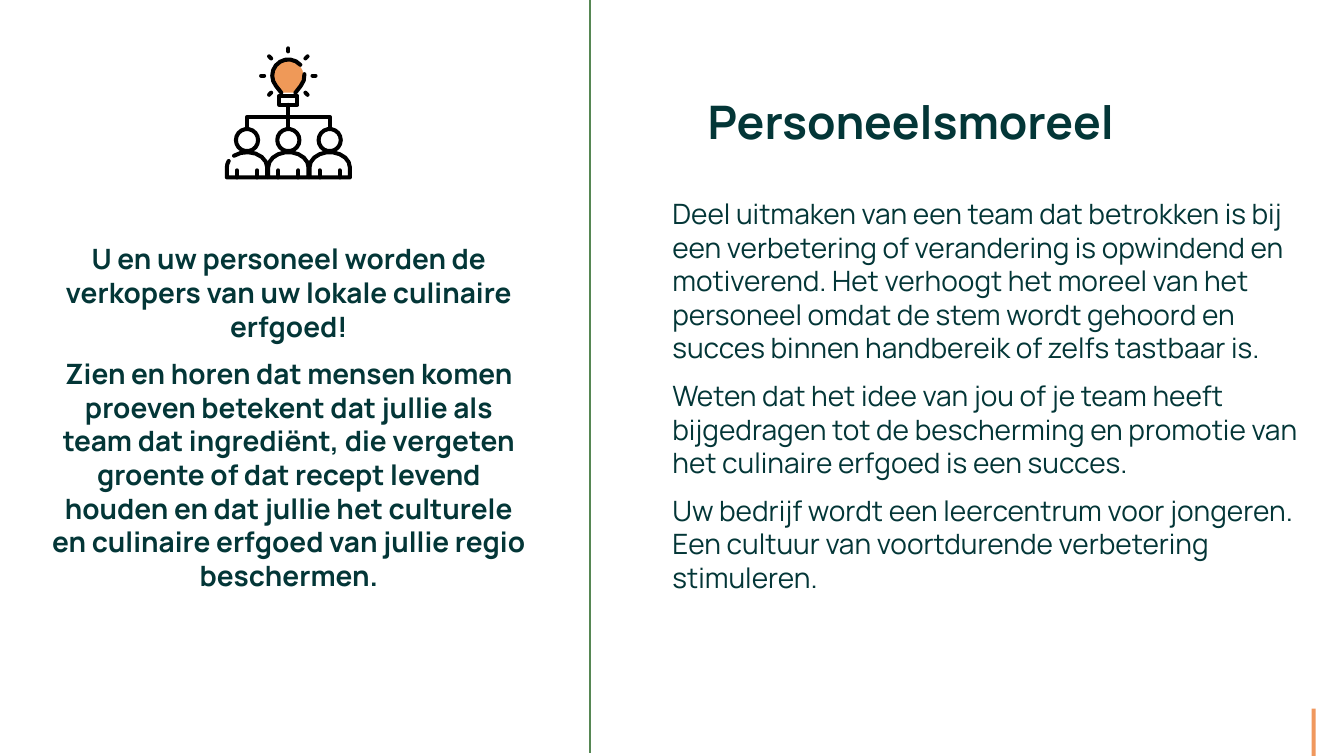
"""Build the staff morale slide."""
from dataclasses import dataclass
from math import cos, radians, sin
from typing import Optional

from lxml import etree
from pptx import Presentation
from pptx.dml.color import RGBColor
from pptx.enum.shapes import MSO_CONNECTOR, MSO_SHAPE
from pptx.enum.text import PP_ALIGN
from pptx.oxml.ns import qn
from pptx.util import Inches, Pt

LEFT, CENTER = PP_ALIGN.LEFT, PP_ALIGN.CENTER
RECT = MSO_SHAPE.RECTANGLE
STRAIGHT = MSO_CONNECTOR.STRAIGHT

Point = tuple[float, float]
Box = tuple[float, float, float, float]
Stroke = list[Point]


@dataclass(frozen=True)
class Theme:
    """Colours, font and sizes of the slide."""
    ink: RGBColor = RGBColor(0x03, 0x36, 0x37)
    rule: RGBColor = RGBColor(0x56, 0x87, 0x54)
    bar: RGBColor = RGBColor(0xF0, 0x98, 0x5E)
    bulb: RGBColor = RGBColor(0xEF, 0x99, 0x58)
    black: RGBColor = RGBColor(0, 0, 0)
    font: str = "Manrope"
    title: float = 33
    body: float = 20
    gap: float = 10
    stroke: float = 2.9


@dataclass(frozen=True)
class Block:
    """A text box with its paragraphs."""
    box: Box
    texts: tuple[str, ...]
    size: float
    bold: bool
    align: PP_ALIGN
    lead: float


@dataclass(frozen=True)
class Person:
    """A figure below the bulb, with the angle where its shoulders start."""
    mid: float
    start: float = 180


THEME = Theme()
BULB: Point = (2.86, 0.75)
HEAD_Y, HEAD_R = 1.39, 0.11
PEOPLE = (Person(2.45, 230), Person(2.86), Person(3.27))
BLOCKS = (
    Block((6.57, 1.9, 6.62, 4.07), (
        "Deel uitmaken van een team dat betrokken is bij een verbetering of verandering is opwindend en "
        "motiverend. Het verhoogt het moreel van het personeel omdat de stem wordt gehoord en succes "
        "binnen handbereik of zelfs tastbaar is.",
        "Weten dat het idee van jou of je team heeft bijgedragen tot de bescherming en promotie van het "
        "culinaire erfgoed is een succes.",
        "Uw bedrijf wordt een leercentrum voor jongeren. Een cultuur van voortdurende verbetering "
        "stimuleren.",
    ), THEME.body, False, LEFT, 1.0),
    Block((6.92, 0.77, 5.64, 0.94), ("Personeelsmoreel",), THEME.title, True, LEFT, 1.2),
    Block((0.41, 2.35, 4.91, 3.76), (
        "U en uw personeel worden de verkopers van uw lokale culinaire erfgoed!",
        "Zien en horen dat mensen komen proeven betekent dat jullie als team dat ingrediënt, die "
        "vergeten groente of dat recept levend houden en dat jullie het culturele en culinaire erfgoed "
        "van jullie regio beschermen.",
    ), THEME.body, True, CENTER, 1.0),
)


def add_text(slide, block: Block) -> None:
    """Add one text block."""
    frame = slide.shapes.add_textbox(*map(Inches, block.box)).text_frame
    frame.word_wrap = True
    for i, text in enumerate(block.texts):
        para = frame.paragraphs[0] if i == 0 else frame.add_paragraph()
        para.text = text
        para.alignment = block.align
        para.line_spacing = block.lead
        para.space_before = Pt(THEME.gap if i else 0)
        font = para.font
        font.name, font.size, font.bold = THEME.font, Pt(block.size), block.bold
        font.color.rgb = THEME.ink


def paint(shape, fill: Optional[RGBColor]) -> None:
    """Fill a shape, or give it a black round-capped line."""
    shape.shadow.inherit = False
    if fill is not None:
        shape.fill.solid()
        shape.fill.fore_color.rgb = fill
        shape.line.fill.background()
        return
    shape.fill.background()
    shape.line.color.rgb = THEME.black
    shape.line.width = Pt(THEME.stroke)
    edge = shape.line._get_or_add_ln()
    edge.set("cap", "rnd")
    etree.SubElement(edge, qn("a:round"))


def trace(slide, strokes: list[Stroke], fill: Optional[RGBColor] = None) -> None:
    """Draw strokes as one freeform, closed if it has a fill."""
    build = None
    for stroke in strokes:
        first, *rest = [(Inches(x), Inches(y)) for x, y in stroke]
        if build is None:
            build = slide.shapes.build_freeform(*first)
        else:
            build.move_to(*first)
        build.add_line_segments(rest, close=fill is not None)
    paint(build.convert_to_shape(), fill)


def arc(mid: Point, wide: float, high: float, start: float, end: float) -> Stroke:
    """Return points on an ellipse, with angles clockwise from the right."""
    steps = max(2, round(abs(end - start) / 20))
    turns = [radians(start + (end - start) * i / steps) for i in range(steps + 1)]
    return [(mid[0] + wide * cos(t), mid[1] + high * sin(t)) for t in turns]


def bulb_lines() -> list[Stroke]:
    """Return the strokes of the bulb and its base."""
    x, y = BULB
    size, neck = 0.16, y + 0.17
    west, east, low, high = x - 0.09, x + 0.09, 0.95, 1.04
    return [
        [(x - 0.07, neck), *arc(BULB, size, size, 140, 318)],
        [*arc(BULB, size, size, -5, 40), (x + 0.07, neck)],
        [(west, low), (east, low), (east, high), (west, high), (west, low)],
    ]


def team_lines() -> list[Stroke]:
    """Return the strokes of the people and the wires above them."""
    top, shelf, floor = HEAD_Y - HEAD_R, 1.16, 1.76
    wide, high = 0.2, 0.15
    west, east = PEOPLE[0].mid, PEOPLE[-1].mid
    lines = [
        [(west, top), (west, shelf), (east, shelf), (east, top)],
        [(BULB[0], 1.04), (BULB[0], top)],
    ]
    for person in PEOPLE:
        x = person.mid
        chest = (x, 1.66)
        lines.append(arc((x, HEAD_Y), HEAD_R, HEAD_R, 0, 360))
        end = 205 if person.start > 180 else 180.1
        lines.append([
            *arc(chest, wide, high, person.start, 360),
            (x + wide, floor), (x - wide, floor),
            *arc(chest, wide, high, 180, end),
        ])
        lines += [[(arm, 1.69), (arm, floor)] for arm in (x - 0.1, x + 0.1)]
    return lines


def add_icon(slide) -> None:
    """Draw the bulb with its rays above the team."""
    x, y = BULB
    neck = y + 0.17
    glass = [(x - 0.07, neck), *arc(BULB, 0.15, 0.15, 140, 400), (x + 0.07, neck)]
    trace(slide, [glass], THEME.bulb)
    trace(slide, bulb_lines() + team_lines())
    for turn in range(135, 406, 45):
        tilt = radians(turn)
        trace(slide, [[(x + r * cos(tilt), y + r * sin(tilt)) for r in (0.24, 0.27)]])


def add_rule(slide) -> None:
    """Draw the line between the two halves."""
    rule = slide.shapes.add_connector(STRAIGHT, *map(Inches, (5.85, -0.03, 5.85, 7.47)))
    rule.line.color.rgb = THEME.rule
    rule.line.width = Pt(1)
    etree.SubElement(rule._element.spPr, qn("a:effectLst"))


def main() -> None:
    """Build and save the slide."""
    deck = Presentation()
    deck.slide_width, deck.slide_height = Inches(13.33), Inches(7.5)
    slide = deck.slides.add_slide(deck.slide_layouts[6])
    add_rule(slide)
    bar = slide.shapes.add_shape(RECT, *map(Inches, (13.01, 7.03, 0.04, 0.47)))
    paint(bar, THEME.bar)
    for block in BLOCKS:
        add_text(slide, block)
    add_icon(slide)
    deck.save("out.pptx")


if __name__ == "__main__":
    main()
